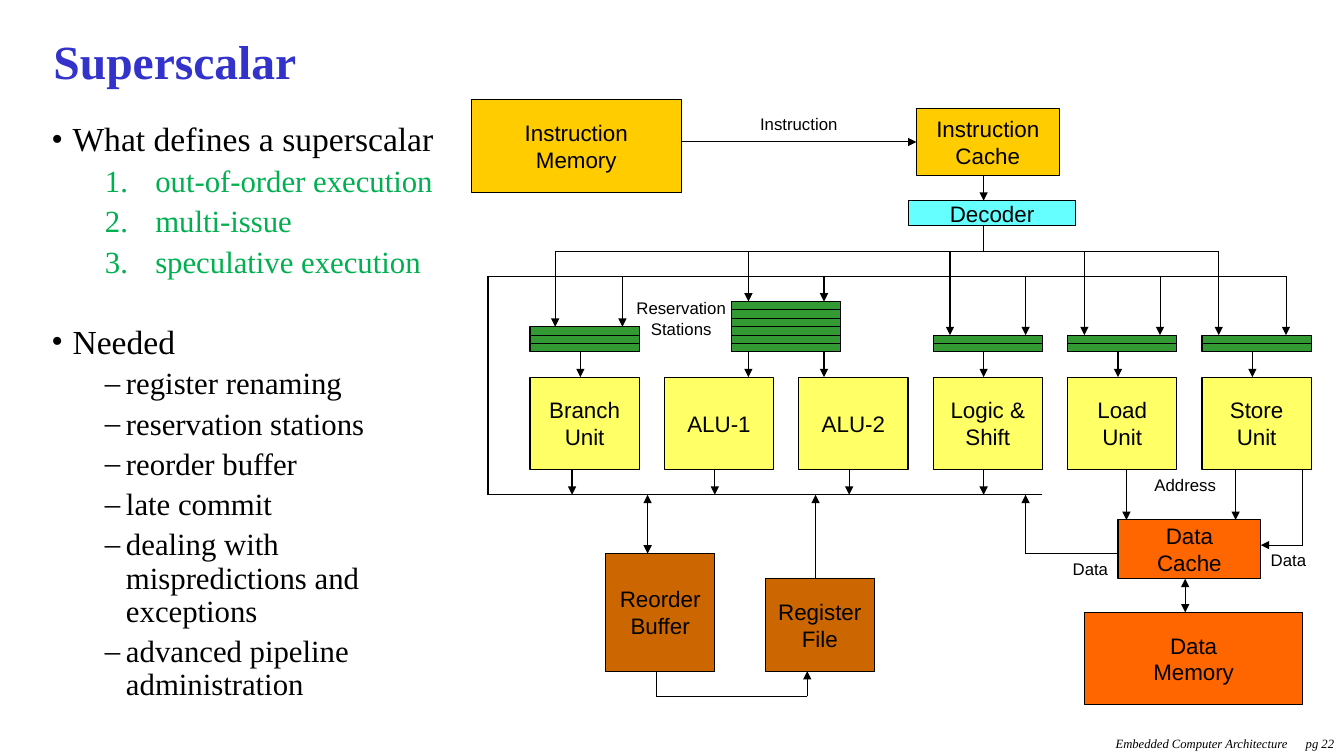
from dataclasses import dataclass
from itertools import pairwise

from lxml.etree import SubElement
from pptx import Presentation
from pptx.dml.color import RGBColor
from pptx.enum.shapes import MSO_CONNECTOR as CONN, MSO_SHAPE as SHAPE
from pptx.enum.text import MSO_ANCHOR as ANCHOR, MSO_AUTO_SIZE as AUTO, PP_ALIGN as ALIGN
from pptx.oxml.ns import qn
from pptx.util import Pt

SANS, SERIF = "Arial", "Times New Roman"
BLACK, BLUE, GREEN = "000000", "3333CC", "00B050"
GOLD, CYAN, YELLOW = "FFCC00", "66FFFF", "FFFF66"
STATION, BROWN, ORANGE = "339933", "CC6600", "FF6600"
LEFT, TOP, UNIT = 348.6, 71.4, 6


@dataclass
class Block:
    x: float
    y: float
    w: float
    h: float
    fill: str
    lines: tuple[str, ...] = ()


@dataclass
class Wire:
    points: list[tuple[float, float]]
    tail: bool = True
    head: bool = False


@dataclass
class Label:
    text: str
    x: float
    y: float
    align: ALIGN = ALIGN.CENTER
    h: float = 3.6


@dataclass
class Item:
    text: str
    bullet: str
    size: float = 22
    color: str = BLACK
    margin: float = 53.3
    indent: float = -15.1
    before: float = 5


def gx(k: float) -> Pt:
    return Pt(LEFT + UNIT * k)


def gy(k: float) -> Pt:
    return Pt(TOP + UNIT * k)


def rgb(color: str) -> RGBColor:
    return RGBColor.from_string(color)


def add_run(p, text: str, size: float, font: str, color: str = BLACK,
            bold: bool = False, italic: bool = False) -> None:
    r = p.add_run()
    r.text = text
    f = r.font
    f.size, f.name, f.bold, f.italic = Pt(size), font, bold, italic
    f.color.rgb = rgb(color)


def draw_block(shapes, b: Block) -> None:
    sp = shapes.add_shape(SHAPE.RECTANGLE, gx(b.x), gy(b.y), Pt(UNIT * b.w), Pt(UNIT * b.h))
    sp.shadow.inherit = False
    sp.fill.solid()
    sp.fill.fore_color.rgb = rgb(b.fill)
    sp.line.color.rgb = rgb(BLACK)
    sp.line.width = Pt(0.75)
    tf = sp.text_frame
    tf.word_wrap = False
    tf.vertical_anchor = ANCHOR.MIDDLE
    tf.margin_top = tf.margin_bottom = Pt(0)
    for i, line in enumerate(b.lines):
        p = tf.add_paragraph() if i else tf.paragraphs[0]
        p.alignment = ALIGN.CENTER
        add_run(p, line, 16, SANS)


def draw_wire(shapes, w: Wire) -> None:
    last = len(w.points) - 2
    for i, ((x1, y1), (x2, y2)) in enumerate(pairwise(w.points)):
        c = shapes.add_connector(CONN.STRAIGHT, gx(x1), gy(y1), gx(x2), gy(y2))
        c.line.color.rgb = rgb(BLACK)
        c.line.width = Pt(0.75)
        ln = c.line._get_or_add_ln()
        if w.head and i == 0:
            SubElement(ln, qn("a:headEnd"), type="triangle")
        if w.tail and i == last:
            SubElement(ln, qn("a:tailEnd"), type="triangle")
        SubElement(c._element.spPr, qn("a:effectLst"))


def draw_text(shapes, text: str, x: Pt, y: Pt, w: Pt, h: Pt, align: ALIGN,
              size: float, font: str, italic: bool = False) -> None:
    tf = shapes.add_textbox(x, y, w, h).text_frame
    tf.word_wrap = True
    p = tf.paragraphs[0]
    p.alignment = align
    add_run(p, text, size, font, italic=italic)


def place(sp, x: float, y: float, w: float, h: float) -> None:
    sp.left, sp.top, sp.width, sp.height = Pt(x), Pt(y), Pt(w), Pt(h)
    sp.text_frame.auto_size = AUTO.NONE
    sp.text_frame.word_wrap = True


def fill_item(p, item: Item) -> None:
    p.level = 0 if item.bullet == "•" else 1
    p.alignment = ALIGN.LEFT
    p.line_spacing = 0.9
    p.space_before = Pt(item.before)
    pPr = p._p.get_or_add_pPr()
    pPr.set("marL", str(Pt(item.margin)))
    pPr.set("indent", str(Pt(item.indent)))
    SubElement(pPr, qn("a:buFont"), typeface=SERIF)
    if item.bullet == "1.":
        SubElement(pPr, qn("a:buAutoNum"), type="arabicPeriod")
    else:
        SubElement(pPr, qn("a:buChar"), char=item.bullet)
    add_run(p, item.text, item.size, SERIF, item.color)


def heading(text: str, before: float = 5) -> Item:
    return Item(text, "•", 24, margin=15.1, before=before)


ITEMS = [
    heading("What defines a superscalar"),
    *(Item(t, "1.", color=GREEN, margin=74.2, indent=-36)
      for t in ("out-of-order execution", "multi-issue", "speculative execution")),
    heading("Needed", 32.3),
    *(Item(t, "–") for t in (
        "register renaming", "reservation stations", "reorder buffer", "late commit",
        "dealing with mispredictions and exceptions", "advanced pipeline administration")),
]

UNITS = [("Branch", "Unit"), ("ALU-1",), ("ALU-2",), ("Logic &", "Shift"),
         ("Load", "Unit"), ("Store", "Unit")]
STATION_DEPTHS = {5: 3, 29: 6, 53: 2, 69: 2, 85: 2}

BLOCKS = [
    Block(-2, 0, 25, 11, GOLD, ("Instruction", "Memory")),
    Block(51, 1, 17, 8, GOLD, ("Instruction", "Cache")),
    Block(50, 12, 20, 3, CYAN, ("Decoder",)),
    *(Block(5 + 16 * i, 33, 13, 11, YELLOW, t) for i, t in enumerate(UNITS)),
    *(Block(x, 29 - i, 13, 1, STATION) for x, n in STATION_DEPTHS.items() for i in range(n)),
    Block(14, 54, 13, 14, BROWN, ("Reorder", "Buffer")),
    Block(33, 57, 13, 11, BROWN, ("Register", "File")),
    Block(75, 50, 17, 7, ORANGE, ("Data", "Cache")),
    Block(71, 61, 26, 11, ORANGE, ("Data", "Memory")),
]

DECODE_DROPS, RESULT_DROPS = (8, 31, 55, 71, 87), (16, 40, 64, 80, 95)
WIRES = [
    Wire([(23, 5), (51, 5)]),
    Wire([(59, 9), (59, 12)]),
    Wire([(59, 15), (59, 18)], tail=False),
    Wire([(8, 18), (87, 18)], tail=False),
    Wire([(66, 47), (0, 47), (0, 21), (95, 21)], tail=False),
    *(Wire([(x, y), (x, 30 - n)])
      for y, drops in ((18, DECODE_DROPS), (21, RESULT_DROPS))
      for x, n in zip(drops, STATION_DEPTHS.values())),
    *(Wire([(x, 30), (x, 33)]) for x in (11, 31, 40, 59, 75, 91)),
    *(Wire([(x, 44), (x, 47)]) for x in (10, 27, 43, 59)),
    *(Wire([(x, 44), (x, 50)]) for x in (76, 89)),
    Wire([(19, 54), (19, 47)], head=True),
    Wire([(39, 57), (39, 47)]),
    Wire([(20, 68), (20, 71), (38, 71), (38, 68)]),
    Wire([(75, 54), (64, 54), (64, 47)]),
    Wire([(83, 57), (83, 61)], head=True),
    Wire([(97, 44), (97, 53), (92, 53)]),
]

LABELS = [
    Label("Reservation Stations", 16, 23, h=6),
    Label("Address", 76, 44),
    Label("Data", 92, 53, ALIGN.LEFT),
    Label("Data", 61, 54, ALIGN.RIGHT),
    Label("Instruction", 30, 1),
]


def main() -> None:
    prs = Presentation()
    prs.slide_width, prs.slide_height = Pt(960), Pt(540)
    s = prs.slides.add_slide(prs.slide_layouts[1])
    title, body = s.placeholders
    place(title, 31, 18, 897, 57.6)
    title.text_frame.vertical_anchor = ANCHOR.MIDDLE
    p = title.text_frame.paragraphs[0]
    p.alignment = ALIGN.LEFT
    p.line_spacing = 0.8
    add_run(p, "Superscalar", 34, SERIF, BLUE, bold=True)

    place(body, 29.5, 84.2, 297.4, 425.5)
    tf = body.text_frame
    for i, item in enumerate(ITEMS):
        fill_item(tf.add_paragraph() if i else tf.paragraphs[0], item)

    for block in BLOCKS:
        draw_block(s.shapes, block)
    for wire in WIRES:
        draw_wire(s.shapes, wire)
    for t in LABELS:
        draw_text(s.shapes, t.text, gx(t.x), gy(t.y), Pt(UNIT * 14), Pt(UNIT * t.h),
                  t.align, 12, SANS)
    for text, x, w in (("Embedded Computer Architecture", 726.6, 200), ("pg 22", 910, 50)):
        draw_text(s.shapes, text, Pt(x), Pt(522), Pt(w), Pt(18), ALIGN.RIGHT, 9, SERIF, True)
    prs.save("out.pptx")


if __name__ == "__main__":
    main()
